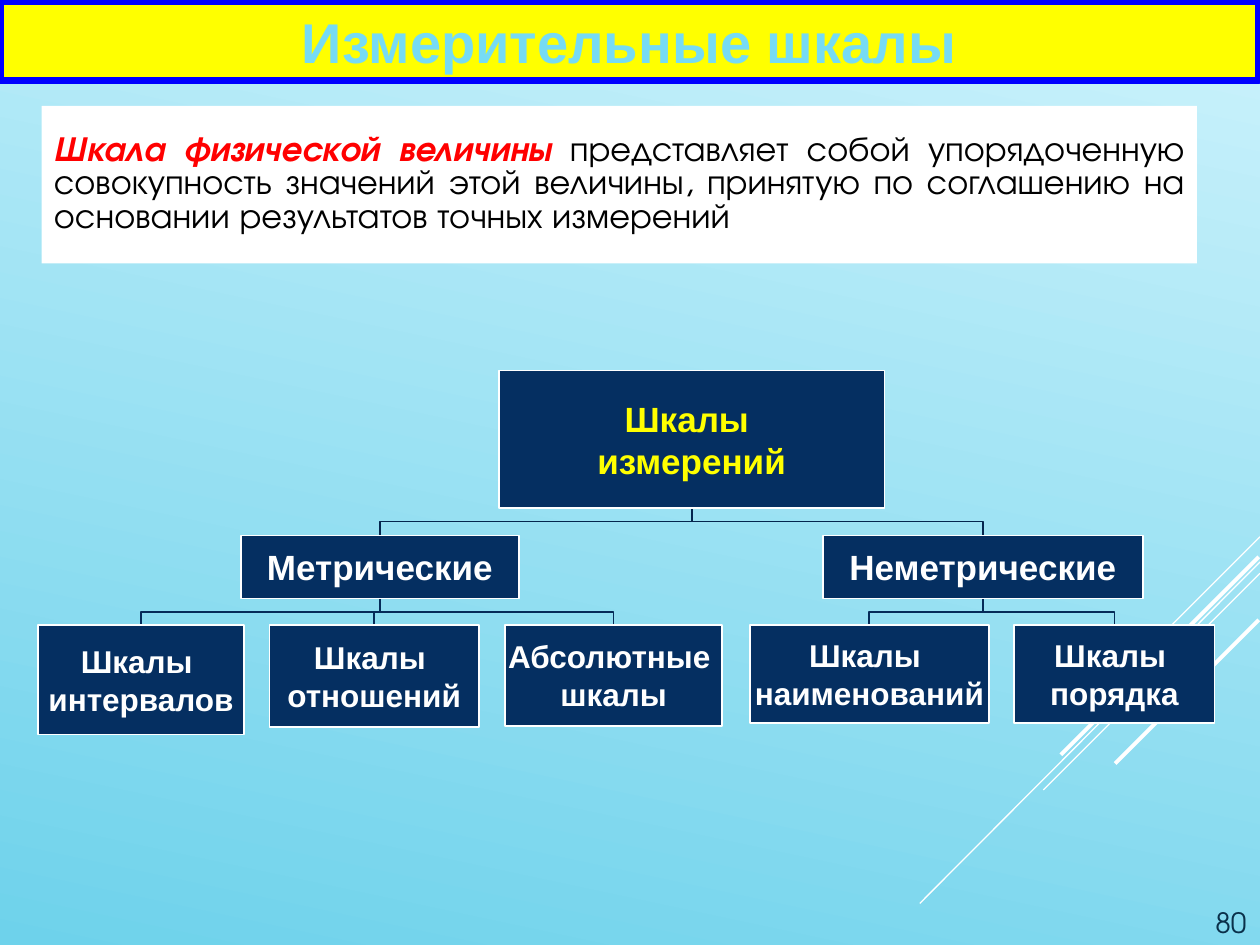
from lxml import etree
from pptx import Presentation
from pptx import util as u
from pptx.dml.color import RGBColor
from pptx.enum import shapes, text
from pptx.oxml import ns

COLORS = {
    "sky_light": "C8F1FB", "sky_dark": "6ED2EB", "white": "FFFFFF",
    "black": "000000", "red": "FF0000", "yellow": "FFFF00", "blue": "0000FF",
    "title": "76DBF4", "navy": "052F61", "number": "0A304A",
    "top_link": "04264E", "low_link": "052B58",
}
RGB = {name: RGBColor.from_string(value) for name, value in COLORS.items()}
HEADING, BODY = "Arial", "TeX Gyre Adventor"


def add_run(paragraph, words, size, font, color, bold=False, italic=False):
    run = paragraph.add_run()
    run.text = words
    run.font.size, run.font.name = u.Pt(size), font
    run.font.bold, run.font.italic = bold, italic
    run.font.color.rgb = RGB[color]


def add_box(place, fill, line=None, width=1):
    box = slide.shapes.add_shape(
        shapes.MSO_SHAPE.RECTANGLE, *[u.Inches(v) for v in place])
    box.shadow.inherit = False
    box.fill.solid()
    box.fill.fore_color.rgb = RGB[fill]
    if line:
        box.line.color.rgb = RGB[line]
        box.line.width = u.Pt(width)
    else:
        box.line.fill.background()
    box.text_frame.word_wrap = True
    box.text_frame.vertical_anchor = text.MSO_ANCHOR.MIDDLE
    return box


prs = Presentation()
prs.slide_width, prs.slide_height = u.Inches(10), u.Inches(7.5)
slide = prs.slides.add_slide(prs.slide_layouts[6])

# Background gradient
sky = slide.background.fill
sky.gradient()
sky.gradient_angle = 258
for stop, color, position in zip(sky.gradient_stops, ("sky_light", "sky_dark"), (0.04, 1)):
    stop.color.rgb = RGB[color]
    stop.position = position

# Diagonal white streaks
streaks = [
    (10, 4.26, 9.17, 5.09, 0.75), (10, 4.46, 7.3, 7.17, 0.75),
    (10, 4.55, 8.28, 6.27, 0.75), (9.99, 4.42, 8.42, 5.99, 2.25),
    (9.99, 4.92, 8.85, 6.06, 2.25),
]
for *ends, width in streaks:
    streak = slide.shapes.add_connector(
        shapes.MSO_CONNECTOR.STRAIGHT, *[u.Inches(v) for v in ends])
    streak.line.color.rgb = RGB["white"]
    streak.line.width = u.Pt(width)
    etree.SubElement(streak._element.spPr, ns.qn("a:effectLst"))

# Slide number
number = slide.shapes.add_textbox(
    u.Inches(8.72), u.Inches(6.98), u.Inches(1.27), u.Inches(0.52)).text_frame
number.word_wrap = True
number.vertical_anchor = text.MSO_ANCHOR.BOTTOM
number.paragraphs[0].alignment = text.PP_ALIGN.RIGHT
add_run(number.paragraphs[0], "80", 16, BODY, "number")

# Definition
definition = add_box((0.33, 0.84, 9.17, 1.25), "white").text_frame.paragraphs[0]
definition.alignment = text.PP_ALIGN.JUSTIFY
definition.line_spacing = 0.8
definition.space_before, definition.space_after = u.Pt(4), u.Pt(6)
add_run(definition, "Шкала физической величины ", 20, BODY, "red", True, True)
add_run(definition, "представляет собой упорядоченную совокупность значений этой "
        "величины, принятую по соглашению на основании результатов точных измерений",
        20, BODY, "black")

# Tree of scales: key -> parent, place, lines, size, text colour
scales = {
    "root": (None, (3.96, 2.94, 3.06, 1.09), ["Шкалы ", "измерений"], 20, "yellow"),
    "metric": ("root", (1.91, 4.25, 2.21, 0.5), ["Метрические"], 20, "white"),
    "interval": ("metric", (0.3, 4.96, 1.64, 0.87), ["Шкалы ", "интервалов"], 18, "white"),
    "ratio": ("metric", (2.14, 4.96, 1.66, 0.81), ["Шкалы ", "отношений"], 18, "white"),
    "absolute": ("metric", (4.01, 4.96, 1.72, 0.8), ["Абсолютные ", "шкалы"], 18, "white"),
    "nonmetric": ("root", (6.53, 4.25, 2.54, 0.5), ["Неметрические"], 20, "white"),
    "nominal": ("nonmetric", (5.95, 4.96, 1.9, 0.78), ["Шкалы ", "наименований"], 18, "white"),
    "ordinal": ("nonmetric", (8.05, 4.96, 1.59, 0.78), ["Шкалы ", "порядка"], 18, "white"),
}

# Elbow links, from the parent's bottom centre to the child's top centre
for parent, (left, top, width, height), *_ in scales.values():
    if parent is None:
        continue
    p_left, p_top, p_width, p_height = scales[parent][1]
    start_x, start_y = p_left + p_width / 2, p_top + p_height
    end_x, bend_y = left + width / 2, (start_y + top) / 2
    elbow = slide.shapes.build_freeform(u.Inches(start_x), u.Inches(start_y))
    elbow.add_line_segments(
        [(u.Inches(x), u.Inches(y))
         for x, y in ((start_x, bend_y), (end_x, bend_y), (end_x, top))], close=False)
    link = elbow.convert_to_shape()
    link.shadow.inherit = False
    link.fill.background()
    link.line.color.rgb = RGB["top_link" if parent == "root" else "low_link"]
    link.line.width = u.Pt(1)

# Scale boxes
for _, place, lines, size, color in scales.values():
    frame = add_box(place, "navy", "white").text_frame
    frame.margin_left = frame.margin_right = u.Inches(0.01)
    frame.margin_top = frame.margin_bottom = u.Inches(0.01)
    for i, words in enumerate(lines):
        paragraph = frame.add_paragraph() if i else frame.paragraphs[0]
        paragraph.alignment = text.PP_ALIGN.CENTER
        add_run(paragraph, words, size, HEADING, color, True)

# Title banner
title = add_box((0, 0.01, 9.99, 0.63), "yellow", "blue", 4.5).text_frame.paragraphs[0]
title.alignment = text.PP_ALIGN.CENTER
add_run(title, "Измерительные шкалы", 32, HEADING, "title", True)

prs.save("out.pptx")
